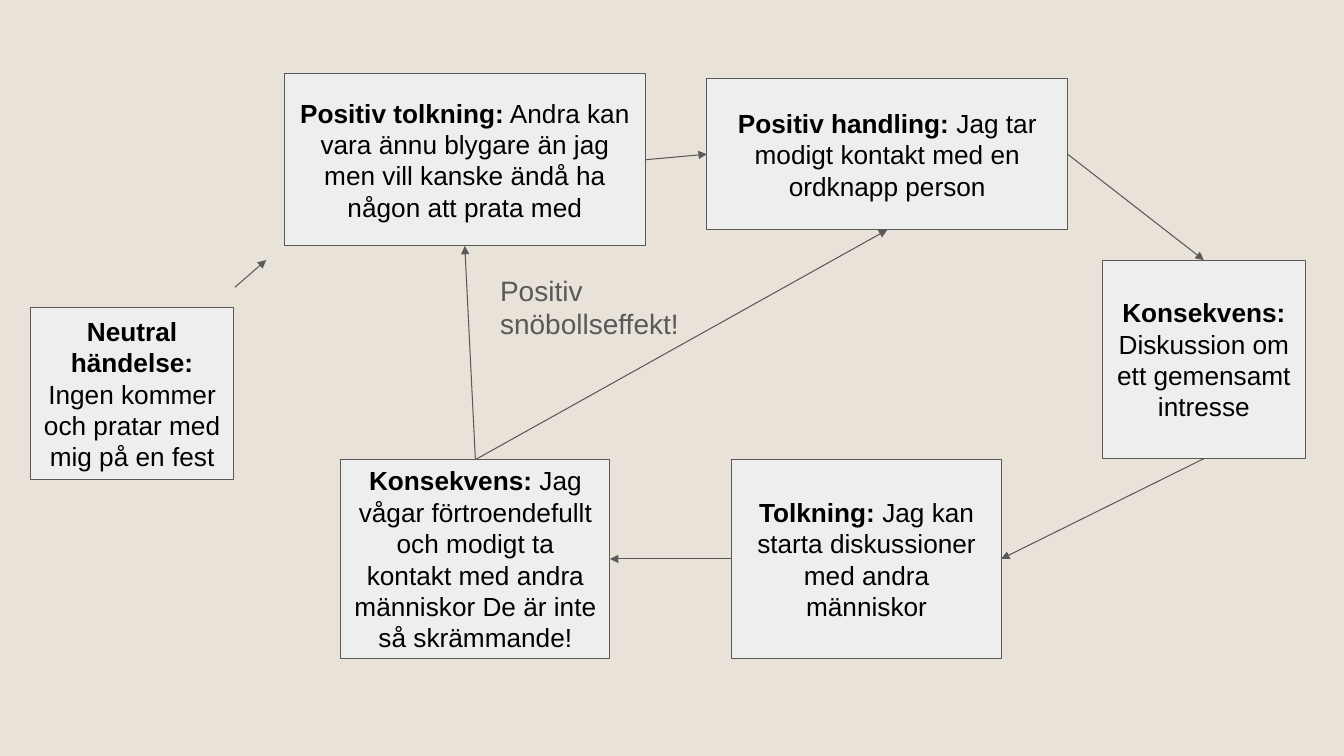
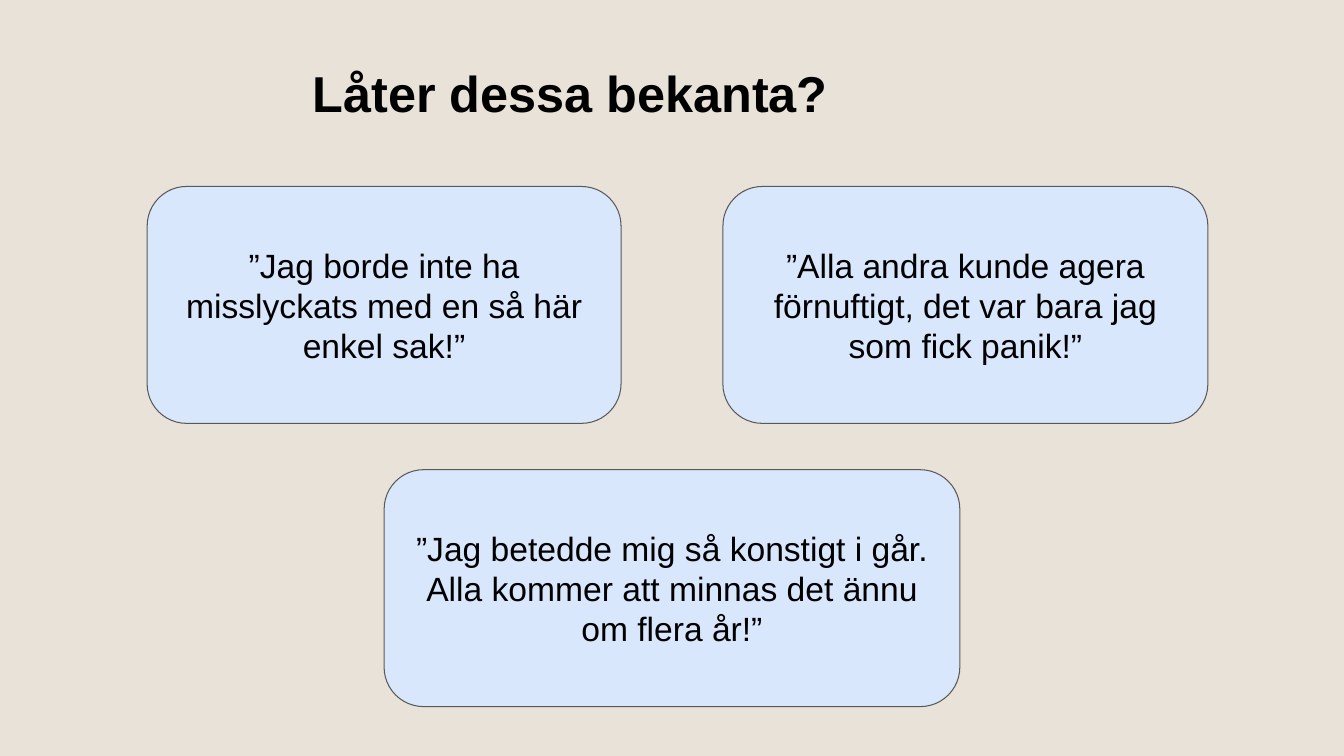
from lxml import etree
from pptx import Presentation
from pptx.dml.color import RGBColor
from pptx.enum.shapes import MSO_CONNECTOR, MSO_SHAPE
from pptx.enum.text import MSO_ANCHOR, MSO_AUTO_SIZE, PP_ALIGN
from pptx.oxml.ns import qn
from pptx.util import Inches, Pt

RECT, ROUNDED = MSO_SHAPE.RECTANGLE, MSO_SHAPE.ROUNDED_RECTANGLE
STRAIGHT = MSO_CONNECTOR.STRAIGHT
TOP_ANCHOR, MIDDLE = MSO_ANCHOR.TOP, MSO_ANCHOR.MIDDLE
LEFT_ALIGN, CENTER = PP_ALIGN.LEFT, PP_ALIGN.CENTER
FIT_SHAPE = MSO_AUTO_SIZE.SHAPE_TO_FIT_TEXT
TOP, LEFT, BOTTOM, RIGHT = range(4)
TITLE_ONLY, BLANK = 5, 6

COLORS = {"background": "E8E2D8", "step": "EEEEEE", "quote": "D9E7FD",
          "line": "595959", "text": "000000"}
FONT = "Arial"
INSET = 0.13

# name: (box, bold lead, rest)
STEPS = {
    "event": ((0.3, 3.05, 2.02, 1.71), "Neutral händelse:",
              " Ingen kommer och pratar med mig på en fest"),
    "reading": ((2.82, 0.73, 3.58, 1.71), "Positiv tolkning:",
                " Andra kan vara ännu blygare än jag men vill kanske ändå ha någon att prata med"),
    "action": ((7.01, 0.78, 3.58, 1.5), "Positiv handling:",
               " Jag tar modigt kontakt med en ordknapp person"),
    "discussion": ((10.93, 2.58, 2.02, 1.97), "Konsekvens: ",
                   "Diskussion om ett gemensamt intresse"),
    "belief": ((7.26, 4.56, 2.67, 1.97), "Tolkning:",
               " Jag kan starta diskussioner med andra människor"),
    "courage": ((3.38, 4.56, 2.67, 1.97), "Konsekvens:",
                " Jag vågar förtroendefullt och modigt ta kontakt med andra människor "
                "De är inte så skrämmande!"),
}
LINKS = [
    ("reading", RIGHT, "action", LEFT),
    ("action", RIGHT, "discussion", TOP),
    ("discussion", BOTTOM, "belief", RIGHT),
    ("belief", LEFT, "courage", RIGHT),
    ("courage", TOP, "reading", BOTTOM),
    ("courage", TOP, "action", BOTTOM),
]
EVENT_ARROW = (2.33, 2.85, 2.64, 2.58)
EFFECT = ((4.83, 2.58, 2.17, 0.94), "Positiv snöbollseffekt!")

TITLE = ((2.97, 0.49, 10.36, 0.88), "Låter dessa bekanta?")
QUOTES = [
    ((1.46, 1.85, 4.7, 2.35), "”Jag borde inte ha misslyckats med en så här enkel sak!”"),
    ((7.17, 1.85, 4.81, 2.35),
     "”Alla andra kunde agera förnuftigt, det var bara jag som fick panik!”"),
    ((3.81, 4.66, 5.71, 2.35),
     "”Jag betedde mig så konstigt i går. Alla kommer att minnas det ännu om flera år!”"),
]


def rgb(name):
    return RGBColor.from_string(COLORS[name])


def inches(values):
    return [Inches(v) for v in values]


def write(sp, runs, size, color="text", align=LEFT_ALIGN, anchor=TOP_ANCHOR):
    """Fill a shape with one paragraph made of (text, bold) runs."""
    tf = sp.text_frame
    tf.word_wrap = True
    tf.vertical_anchor = anchor
    tf.margin_left = tf.margin_top = tf.margin_right = tf.margin_bottom = Inches(INSET)
    p = tf.paragraphs[0]
    p.alignment = align
    for text, bold in runs:
        r = p.add_run()
        r.text = text
        r.font.name, r.font.size, r.font.bold = FONT, Pt(size), bold
        r.font.color.rgb = rgb(color)


def style_line(line):
    line.color.rgb = rgb("line")
    line.width = Pt(0.75)


def add_box(slide, kind, box, fill, runs, size):
    sp = slide.shapes.add_shape(kind, *inches(box))
    sp.shadow.inherit = False
    sp.fill.solid()
    sp.fill.fore_color.rgb = rgb(fill)
    style_line(sp.line)
    write(sp, runs, size, align=CENTER, anchor=MIDDLE)
    return sp


def add_arrow(slide, ends=(0, 0, 0, 0)):
    arrow = slide.shapes.add_connector(STRAIGHT, *inches(ends))
    style_line(arrow.line)
    props = arrow._element.spPr
    etree.SubElement(props.find(qn("a:ln")), qn("a:tailEnd"), type="triangle")
    etree.SubElement(props, qn("a:effectLst"))
    return arrow


def build_cycle(prs):
    slide = prs.slides.add_slide(prs.slide_layouts[BLANK])
    steps = {name: add_box(slide, RECT, box, "step", [(lead, True), (rest, False)], 18.7)
             for name, (box, lead, rest) in STEPS.items()}
    add_arrow(slide, EVENT_ARROW)
    for start, start_side, end, end_side in LINKS:
        arrow = add_arrow(slide)
        arrow.begin_connect(steps[start], start_side)
        arrow.end_connect(steps[end], end_side)
    box, text = EFFECT
    label = slide.shapes.add_textbox(*inches(box))
    write(label, [(text, False)], 20, "line")
    label.text_frame.auto_size = FIT_SHAPE


def build_quotes(prs):
    slide = prs.slides.add_slide(prs.slide_layouts[TITLE_ONLY])
    box, text = TITLE
    title = slide.shapes.title
    title.left, title.top, title.width, title.height = inches(box)
    write(title, [(text, True)], 36)
    title.text_frame.auto_size = FIT_SHAPE
    for box, text in QUOTES:
        add_box(slide, ROUNDED, box, "quote", [(text, False)], 24)


def main():
    prs = Presentation()
    prs.slide_width, prs.slide_height = Inches(13.33), Inches(7.5)
    background = prs.slide_master.background.fill
    background.solid()
    background.fore_color.rgb = rgb("background")
    build_cycle(prs)
    build_quotes(prs)
    prs.save("out.pptx")


if __name__ == "__main__":
    main()
